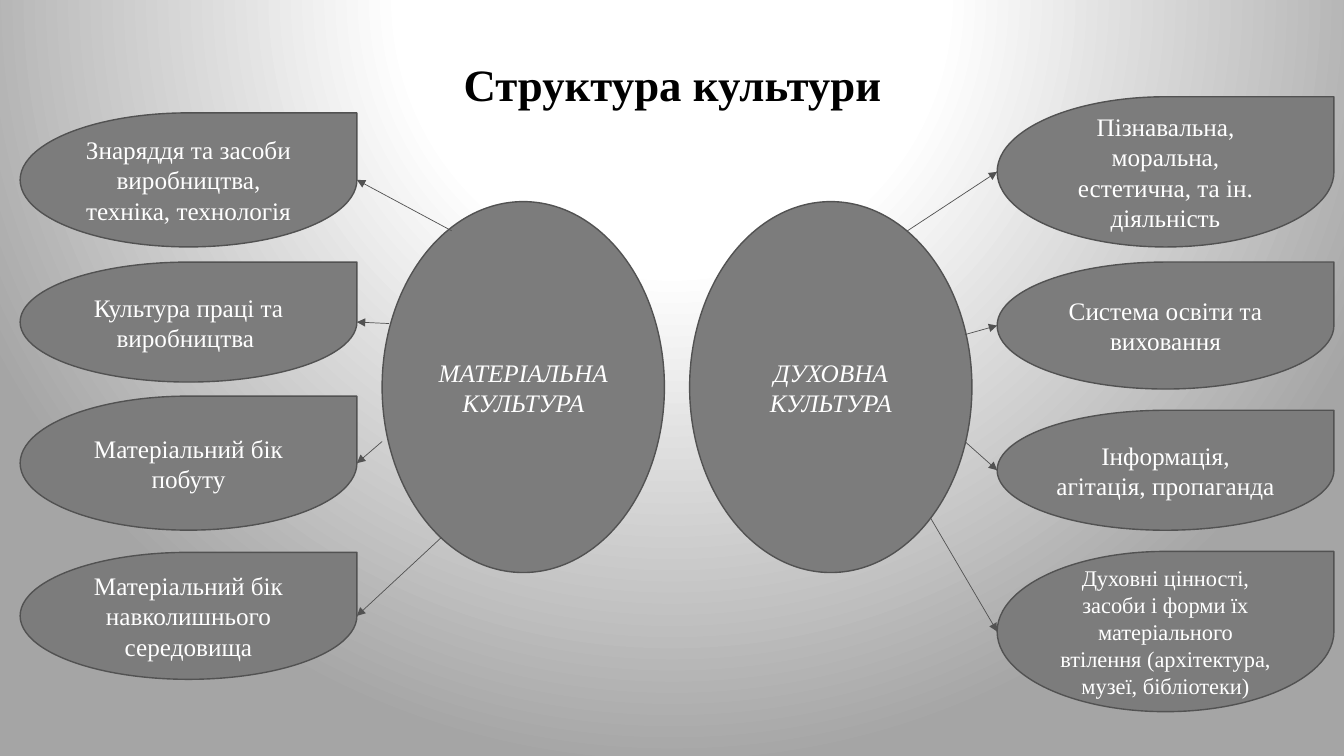
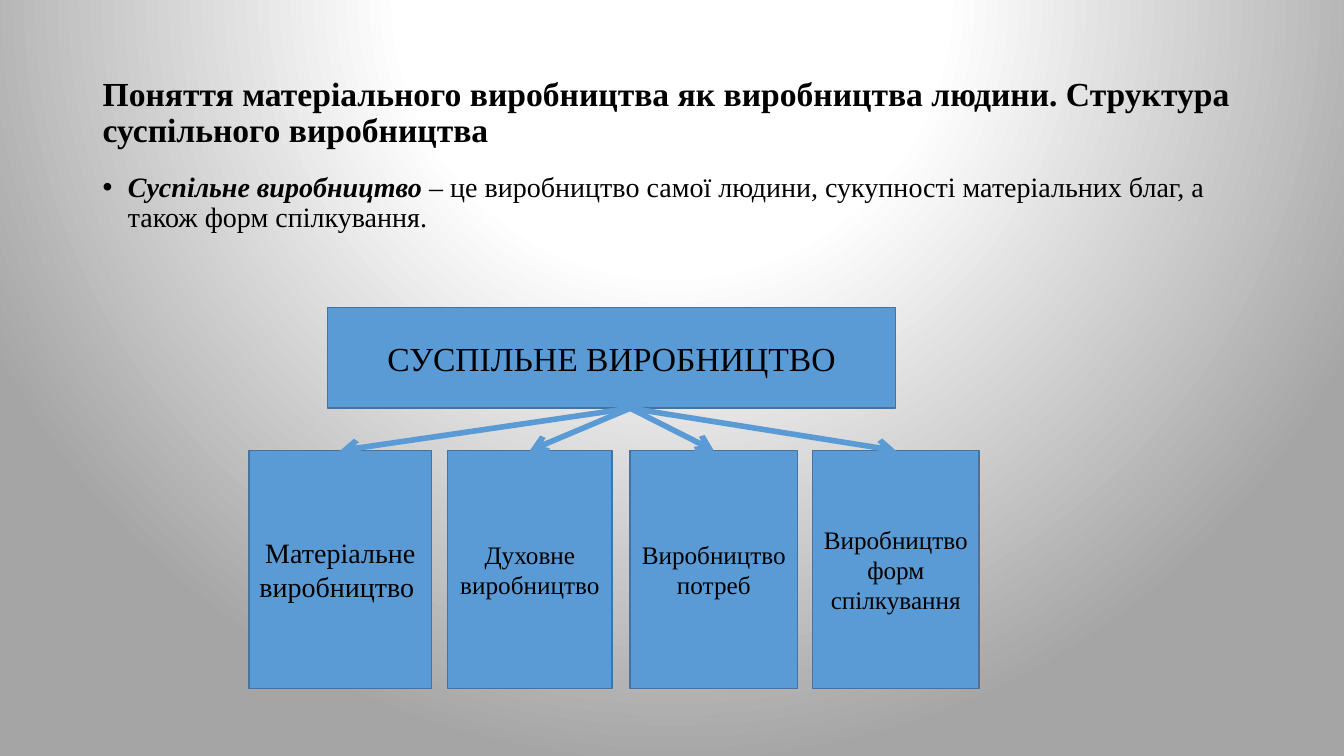
from lxml import etree
from pptx import Presentation
from pptx import util as u
from pptx.dml.color import RGBColor
from pptx.enum import shapes, text
from pptx.oxml import parse_xml
from pptx.oxml.ns import nsdecls, qn

# ---- shared look ----
FONT = "Times New Roman"
BLACK, WHITE = "000000", "FFFFFF"
GRAY, GRAY_EDGE = "7C7C7C", "525252"
BLUE, BLUE_EDGE = "5B9BD5", "43739E"
GRADIENT = [(0, WHITE), (35, WHITE), (100, "A5A5A5")]
CENTER = text.PP_ALIGN.CENTER
MIDDLE, TOP = text.MSO_ANCHOR.MIDDLE, text.MSO_ANCHOR.TOP
MARGIN, CONTENT_W = 0.92, 11.5

# ---- slide 1 content ----
STRUCTURE_TITLE = "Структура культури"
HUB_TOP, HUB_W, HUB_H = 2, 2.8, 3.68
LEAF_W = 3.34
# hub: text, left, leaf left, leaf edge facing the hub
# leaf: text, top, height, font size, arrow start on the hub
HUBS = [
    ("МАТЕРІАЛЬНА КУЛЬТУРА", 3.79, 0.2, 0.2 + LEAF_W, [
        ("Знаряддя та засоби виробництва, техніка, технологія", 1.12, 1.33, 18, (4.48, 2.29)),
        ("Культура праці та виробництва ", 2.6, 1.19, 18, (3.86, 3.21)),
        ("Матеріальний бік побуту", 3.93, 1.33, 18, (3.79, 4.38)),
        ("Матеріальний бік навколишнього середовища", 5.48, 1.26, 18, (4.38, 5.33)),
    ]),
    ("ДУХОВНА КУЛЬТУРА", 6.84, 9.89, 9.89, [
        ("Пізнавальна, моральна, естетична, та ін. діяльність", 0.96, 1.49, 18, (9, 2.29)),
        ("Система освіти та виховання", 2.6, 1.26, 18, (9.57, 3.32)),
        ("Інформація, агітація, пропаганда", 4.07, 1.19, 18, (9.57, 4.38)),
        ("Духовні цінності, засоби і форми їх матеріального втілення "
         "(архітектура, музеї, бібліотеки)", 5.47, 1.59, 16, (9.23, 5.14)),
    ]),
]

# ---- slide 2 content ----
PRODUCTION_TITLE = ("Поняття матеріального виробництва як виробництва людини. "
                    "Структура суспільного виробництва")
DEFINITION = [
    ("Суспільне виробництво ", {"bold": True, "italic": True}),
    ("– це виробництво самої людини, сукупності матеріальних благ, "
     "а також форм спілкування.", {}),
]
ROOT = ("СУСПІЛЬНЕ ВИРОБНИЦТВО", (3.25, 3.05, 5.63, 1))
ROOT_EXIT = (6.25, 4.05)
BRANCH_TOP, BRANCH_H = 4.47, 2.36
# branch: paragraphs, left, width, font size
BRANCHES = [
    (["Матеріальне", "виробництво "], 2.47, 1.81, 20),
    (["Духовне виробництво "], 4.44, 1.63, 18),
    (["Виробництво", "потреб"], 6.25, 1.66, 18),
    (["Виробництво форм спілкування"], 8.06, 1.65, 18),
]


def rgb(color):
    return RGBColor.from_string(color)


def inches(*values):
    return [u.Inches(v) for v in values]


def write(sp, paragraphs, size, color, align=None, anchor=MIDDLE, spacing=None, **fmt):
    """Each paragraph is a string or a list of (text, format) runs."""
    tf = sp.text_frame
    tf.word_wrap = True
    tf.vertical_anchor = anchor
    for i, runs in enumerate(paragraphs):
        p = tf.paragraphs[0] if i == 0 else tf.add_paragraph()
        p.alignment, p.line_spacing = align, spacing
        for words, extra in [(runs, {})] if isinstance(runs, str) else runs:
            r = p.add_run()
            r.text = words
            look = {"name": FONT, "size": u.Pt(size), **fmt, **extra}
            for key, value in look.items():
                setattr(r.font, key, value)
            r.font.color.rgb = rgb(color)
    return tf


def add_text(s, box, paragraphs, size, **fmt):
    sp = s.shapes.add_textbox(*inches(*box))
    return write(sp, paragraphs, size, BLACK, spacing=0.9, **fmt)


def add_node(s, kind, box, paragraphs, size, colors, **fmt):
    fill, edge, ink = colors
    sp = s.shapes.add_shape(kind, *inches(*box))
    sp.shadow.inherit = False
    sp.fill.solid()
    sp.fill.fore_color.rgb = rgb(fill)
    sp.line.color.rgb = rgb(edge)
    sp.line.width = u.Pt(1)
    write(sp, paragraphs, size, ink, align=CENTER, **fmt)


def add_arrow(s, start, end, color, width, head):
    c = s.shapes.add_connector(shapes.MSO_CONNECTOR.STRAIGHT, *inches(*start, *end))
    c.line.color.rgb = rgb(color)
    c.line.width = u.Pt(width)
    etree.SubElement(c.line._get_or_add_ln(), qn("a:tailEnd"), type=head)
    etree.SubElement(c._element.spPr, qn("a:effectLst"))


def add_bullet(p, indent):
    pPr = p._p.get_or_add_pPr()
    pPr.set("marL", str(u.Inches(indent)))
    pPr.set("indent", str(-u.Inches(indent)))
    etree.SubElement(pPr, qn("a:buFont"), typeface="Arial")
    etree.SubElement(pPr, qn("a:buChar"), char="•")


def set_background(master):
    stops = "".join(f'<a:gs pos="{pos * 1000}"><a:srgbClr val="{color}"/></a:gs>'
                    for pos, color in GRADIENT)
    bg = parse_xml(
        f'<p:bg {nsdecls("p", "a")}><p:bgPr><a:gradFill rotWithShape="1">'
        f'<a:gsLst>{stops}</a:gsLst><a:path path="circle">'
        '<a:fillToRect l="50000" t="-80000" r="50000" b="180000"/></a:path>'
        '</a:gradFill><a:effectLst/></p:bgPr></p:bg>')
    cSld = master._element.cSld
    for old in cSld.findall(qn("p:bg")):
        cSld.remove(old)
    cSld.insert(0, bg)


def build_structure(s):
    colors = (GRAY, GRAY_EDGE, WHITE)
    add_text(s, (MARGIN, 0.48, CONTENT_W, 0.76), [STRUCTURE_TITLE], 32,
             align=CENTER, bold=True)
    for name, left, leaf_left, leaf_edge, leaves in HUBS:
        add_node(s, shapes.MSO_SHAPE.OVAL, (left, HUB_TOP, HUB_W, HUB_H),
                 [name], 18, colors, italic=True)
        for words, top, height, size, start in leaves:
            add_node(s, shapes.MSO_SHAPE.TEAR, (leaf_left, top, LEAF_W, height),
                     [words], size, colors)
            add_arrow(s, start, (leaf_edge, top + height / 2), GRAY_EDGE, 0.5, "triangle")


def build_production(s):
    colors = (BLUE, BLUE_EDGE, BLACK)
    add_text(s, (MARGIN, 0.4, CONTENT_W, 1.45), [PRODUCTION_TITLE], 24, bold=True)
    tf = add_text(s, (MARGIN, 1.67, CONTENT_W, 5.09), [DEFINITION], 20, anchor=TOP)
    tf.paragraphs[0].space_before = u.Pt(10)
    add_bullet(tf.paragraphs[0], 0.25)
    # tree of boxes
    name, box = ROOT
    add_node(s, shapes.MSO_SHAPE.RECTANGLE, box, [name], 24, colors)
    for paragraphs, left, width, size in BRANCHES:
        add_node(s, shapes.MSO_SHAPE.RECTANGLE, (left, BRANCH_TOP, width, BRANCH_H),
                 paragraphs, size, colors)
        add_arrow(s, ROOT_EXIT, (left + width / 2, BRANCH_TOP), BLUE, 4, "arrow")


def main():
    prs = Presentation()
    prs.slide_width, prs.slide_height = inches(13.33, 7.5)
    set_background(prs.slide_master)
    for build in (build_structure, build_production):
        build(prs.slides.add_slide(prs.slide_layouts[6]))
    prs.save("out.pptx")


if __name__ == "__main__":
    main()
